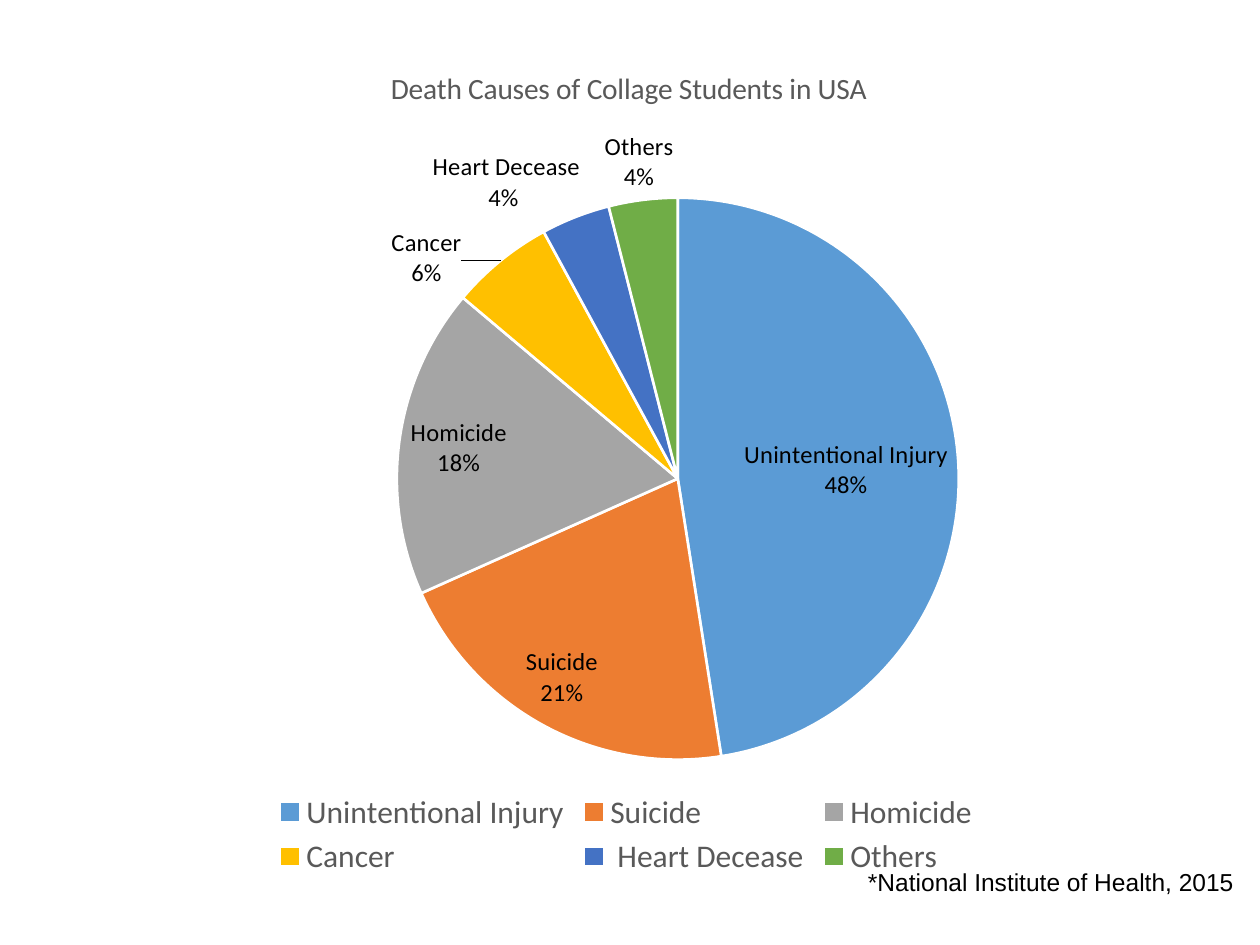
from lxml import etree
from pptx import Presentation
from pptx.chart.data import CategoryChartData
from pptx.dml.color import RGBColor
from pptx.enum.chart import XL_CHART_TYPE as Kind
from pptx.enum.chart import XL_LABEL_POSITION as Spot
from pptx.enum.chart import XL_LEGEND_POSITION as Side
from pptx.enum.text import MSO_AUTO_SIZE as Fit
from pptx.oxml.ns import qn
from pptx.util import Inches, Pt

BLACK = RGBColor(0, 0, 0)
WHITE = RGBColor(255, 255, 255)
GRAY = RGBColor(0x59, 0x59, 0x59)
BLUE = RGBColor(0x5B, 0x9B, 0xD5)
ORANGE = RGBColor(0xED, 0x7D, 0x31)
SILVER = RGBColor(0xA5, 0xA5, 0xA5)
GOLD = RGBColor(0xFF, 0xC0, 0x00)
NAVY = RGBColor(0x44, 0x72, 0xC4)
GREEN = RGBColor(0x70, 0xAD, 0x47)

LEFT, TOP, WIDE, HIGH = 0.11, 0.33, 9.72, 6.67

CAUSES = [
    ("Unintentional Injury", 48, BLUE, Spot.INSIDE_END, -0.02, 0.1),
    ("Suicide", 21, ORANGE, Spot.INSIDE_END, -0.17, -0.09),
    ("Homicide", 18, SILVER, Spot.INSIDE_END, 0.03, -0.18),
    ("Cancer", 6, GOLD, Spot.OUTSIDE_END, -0.27, 0.26),
    (" Heart Decease", 4, NAVY, Spot.OUTSIDE_END, 0.06, 0.02),
    ("Others", 4, GREEN, Spot.OUTSIDE_END, 0.25, 0),
]


def set_font(font, size, color, name="Calibri"):
    font.size = Pt(size)
    font.color.rgb = color
    font.name = name
    font.bold = False


def set_place(node, index, **parts):
    for old in node.findall(qn("c:layout")):
        node.remove(old)
    layout = etree.Element(qn("c:layout"))
    manual = etree.SubElement(layout, qn("c:manualLayout"))
    for tag, value in parts.items():
        etree.SubElement(manual, qn("c:" + tag)).set("val", str(value))
    node.insert(index, layout)


def add_title(chart, text):
    frame = chart.chart_title.text_frame
    frame.text = text
    set_font(frame.paragraphs[0].runs[0].font, 16.8, GRAY)
    set_place(chart.element.find(".//" + qn("c:title")), 1, xMode="edge", yMode="edge",
              x=(3.06 - LEFT) / WIDE, y=(0.5 - TOP) / HIGH)


def add_legend(chart):
    chart.has_legend = True
    legend = chart.legend
    legend.position = Side.BOTTOM
    legend.include_in_layout = False
    set_font(legend.font, 18, GRAY)


def add_labels(chart, series):
    labels = series.data_labels
    labels.show_category_name = True
    labels.show_percentage = True
    labels.show_value = False
    set_font(labels.font, 14, BLACK)
    for index, (_, _, color, spot, _, _) in enumerate(CAUSES):
        point = series.points[index]
        point.format.fill.solid()
        point.format.fill.fore_color.rgb = color
        point.format.line.color.rgb = WHITE
        point.format.line.width = Pt(1.5)
        set_font(point.data_label.font, 14, BLACK)
        point.data_label.position = spot
    nodes = chart.element.findall(".//" + qn("c:dLbl"))
    for node, (_, _, _, _, right, down) in zip(nodes, CAUSES):
        for tag, value in (("showVal", "0"), ("showCatName", "1"), ("showPercent", "1")):
            node.find(qn("c:" + tag)).set("val", value)
        set_place(node, 1, x=right / WIDE, y=down / HIGH)
    group = nodes[0].getparent()
    lead = group.find(qn("c:showLeaderLines"))
    if lead is None:
        lead = etree.SubElement(group, qn("c:showLeaderLines"))
    lead.set("val", "1")


def add_pie(slide):
    data = CategoryChartData()
    data.categories = [cause[0] for cause in CAUSES]
    data.add_series("Series 1", [cause[1] for cause in CAUSES])
    chart = slide.shapes.add_chart(
        Kind.PIE, Inches(LEFT), Inches(TOP), Inches(WIDE), Inches(HIGH), data).chart
    set_font(chart.font, 14, BLACK)
    plot = chart.plots[0]
    plot.vary_by_categories = True
    add_title(chart, "Death Causes of Collage Students in USA")
    add_legend(chart)
    add_labels(chart, plot.series[0])
    set_place(chart.element.find(".//" + qn("c:plotArea")), 0, layoutTarget="inner",
              xMode="edge", yMode="edge", x=(3.15 - LEFT) / WIDE, y=(1.57 - TOP) / HIGH,
              w=4.46 / WIDE, h=4.46 / HIGH)


def add_note(slide, text):
    box = slide.shapes.add_textbox(Inches(6.79), Inches(6.83), Inches(3.12), Inches(0.34))
    frame = box.text_frame
    frame.text = text
    frame.word_wrap = False
    frame.auto_size = Fit.SHAPE_TO_FIT_TEXT
    set_font(frame.paragraphs[0].runs[0].font, 14, BLACK, "Arial")


def main():
    deck = Presentation()
    deck.slide_width, deck.slide_height = Inches(10), Inches(7.5)
    slide = deck.slides.add_slide(deck.slide_layouts[6])
    add_pie(slide)
    add_note(slide, "*National Institute of Health, 2015")
    deck.save("out.pptx")


if __name__ == "__main__":
    main()
